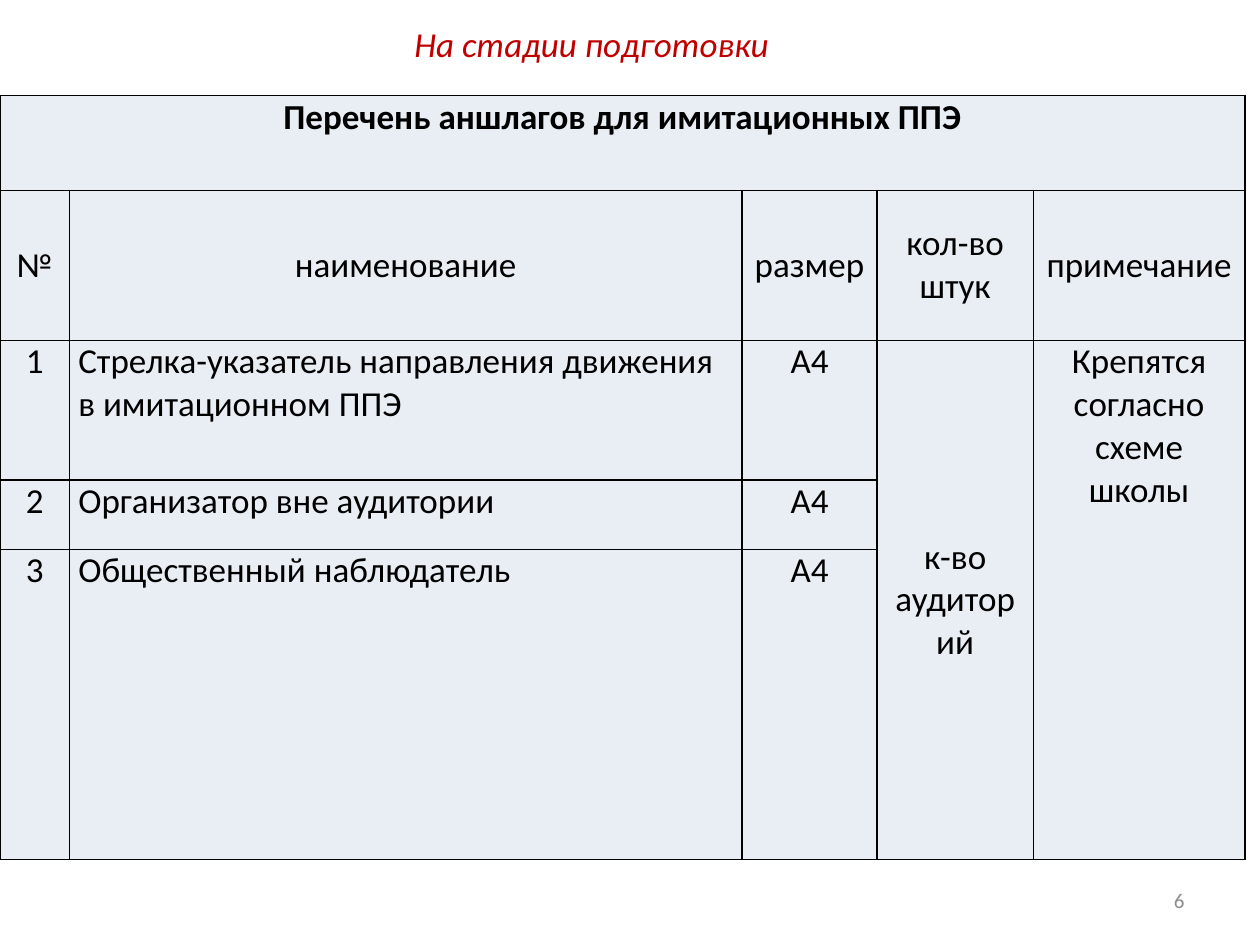
from dataclasses import dataclass

from lxml.etree import SubElement
from pptx import Presentation
from pptx.dml.color import RGBColor
from pptx.enum.text import MSO_ANCHOR, MSO_AUTO_SIZE, PP_ALIGN
from pptx.oxml.ns import qn
from pptx.slide import Slide
from pptx.table import Table, _Cell
from pptx.text.text import TextFrame
from pptx.util import Cm, Pt


@dataclass(frozen=True)
class Theme:
    """Colours and type sizes of the slide."""
    font: str = "Calibri"
    text: str = "000000"
    accent: str = "C00000"
    muted: str = "8C8C8C"
    cell: str = "E9EDF4"
    border: str = "000000"
    body_size: int = 20
    number_size: int = 12
    border_width: int = 1


@dataclass(frozen=True)
class Entry:
    """A table cell with its text, place, span and alignment."""
    text: str
    row: int
    column: int
    rows: int = 1
    columns: int = 1
    align: PP_ALIGN = PP_ALIGN.CENTER
    anchor: MSO_ANCHOR = MSO_ANCHOR.TOP
    bold: bool = False


THEME = Theme()
COLUMN_WIDTHS = (1.4, 13.56, 2.72, 3.15, 4.27)
ROW_HEIGHTS = (1.91, 3.02, 2.82, 1.4, 6.25)
HEADINGS = ("№", "наименование", "размер", "кол-во штук", "примечание")
SIGNS = (
    "Стрелка-указатель направления движения в имитационном ППЭ",
    "Организатор вне аудитории",
    "Общественный наблюдатель",
)
FIRST_SIGN_ROW = 2


def write(frame: TextFrame, text: str, size: int, color: str, align: PP_ALIGN,
          bold: bool = False, italic: bool = False) -> None:
    """Set the text of a frame and format its paragraph."""
    frame.text = text
    para = frame.paragraphs[0]
    para.alignment = align
    for span in para.runs:
        span.font.name = THEME.font
        span.font.size = Pt(size)
        span.font.bold = bold
        span.font.italic = italic
        span.font.color.rgb = RGBColor.from_string(color)


def style_cell(cell: _Cell) -> None:
    """Give a cell its borders, fill and margins."""
    properties = cell._tc.get_or_add_tcPr()
    for side in ("lnL", "lnR", "lnT", "lnB"):
        line = SubElement(properties, qn(f"a:{side}"), w=str(Pt(THEME.border_width)))
        fill = SubElement(line, qn("a:solidFill"))
        SubElement(fill, qn("a:srgbClr"), val=THEME.border)
    cell.fill.solid()
    cell.fill.fore_color.rgb = RGBColor.from_string(THEME.cell)
    cell.margin_left = cell.margin_right = Cm(0.18)
    cell.margin_top = cell.margin_bottom = 0


def fill_entry(table: Table, entry: Entry) -> None:
    """Merge the cells of an entry and write its text."""
    cell = table.cell(entry.row, entry.column)
    if entry.rows > 1 or entry.columns > 1:
        cell.merge(table.cell(entry.row + entry.rows - 1,
                              entry.column + entry.columns - 1))
    cell.vertical_anchor = entry.anchor
    write(cell.text_frame, entry.text, THEME.body_size, THEME.text,
          entry.align, bold=entry.bold)


def list_entries() -> list[Entry]:
    """Return every filled cell of the table."""
    middle = MSO_ANCHOR.MIDDLE
    entries = [Entry("Перечень аншлагов для имитационных ППЭ", 0, 0,
                     columns=len(HEADINGS), bold=True)]
    entries += [Entry(heading, 1, column, anchor=middle)
                for column, heading in enumerate(HEADINGS)]
    for index, sign in enumerate(SIGNS):
        row = FIRST_SIGN_ROW + index
        entries += [Entry(str(index + 1), row, 0),
                    Entry(sign, row, 1, align=PP_ALIGN.LEFT),
                    Entry("А4", row, 2)]
    entries += [
        Entry("к-во аудиторий", FIRST_SIGN_ROW, 3, rows=len(SIGNS), anchor=middle),
        Entry("Крепятся согласно схеме школы", FIRST_SIGN_ROW, 4, rows=len(SIGNS)),
    ]
    return entries


def add_sign_table(page: Slide) -> None:
    """Add the table of signs."""
    table = page.shapes.add_table(
        len(ROW_HEIGHTS), len(COLUMN_WIDTHS), 0, Cm(1.93),
        Cm(sum(COLUMN_WIDTHS)), Cm(sum(ROW_HEIGHTS))).table
    table.first_row = table.horz_banding = False
    for column, width in zip(table.columns, COLUMN_WIDTHS):
        column.width = Cm(width)
    for row, height in zip(table.rows, ROW_HEIGHTS):
        row.height = Cm(height)
    for cell in table.iter_cells():
        style_cell(cell)
    for entry in list_entries():
        fill_entry(table, entry)


def set_title(page: Slide) -> None:
    """Place and write the slide title."""
    title = page.shapes.title
    title.left, title.top, title.width, title.height = Cm(8.1), Cm(0.33), Cm(7.72), Cm(1.12)
    frame = title.text_frame
    write(frame, "На стадии подготовки", THEME.body_size, THEME.accent,
          PP_ALIGN.LEFT, italic=True)
    frame.word_wrap = False
    frame.auto_size = MSO_AUTO_SIZE.SHAPE_TO_FIT_TEXT
    frame.vertical_anchor = MSO_ANCHOR.TOP


def add_page_number(page: Slide) -> None:
    """Add the page number at the lower right."""
    box = page.shapes.add_textbox(Cm(18.2), Cm(17.65), Cm(5.93), Cm(1.01))
    frame = box.text_frame
    frame.word_wrap = True
    frame.vertical_anchor = MSO_ANCHOR.MIDDLE
    write(frame, "6", THEME.number_size, THEME.muted, PP_ALIGN.RIGHT)


def main() -> None:
    """Build and save the deck."""
    deck = Presentation()
    deck.slide_width, deck.slide_height = Cm(25.4), Cm(19.05)
    page = deck.slides.add_slide(deck.slide_layouts.get_by_name("Title Only"))
    add_page_number(page)
    add_sign_table(page)
    set_title(page)
    deck.save("out.pptx")


if __name__ == "__main__":
    main()
